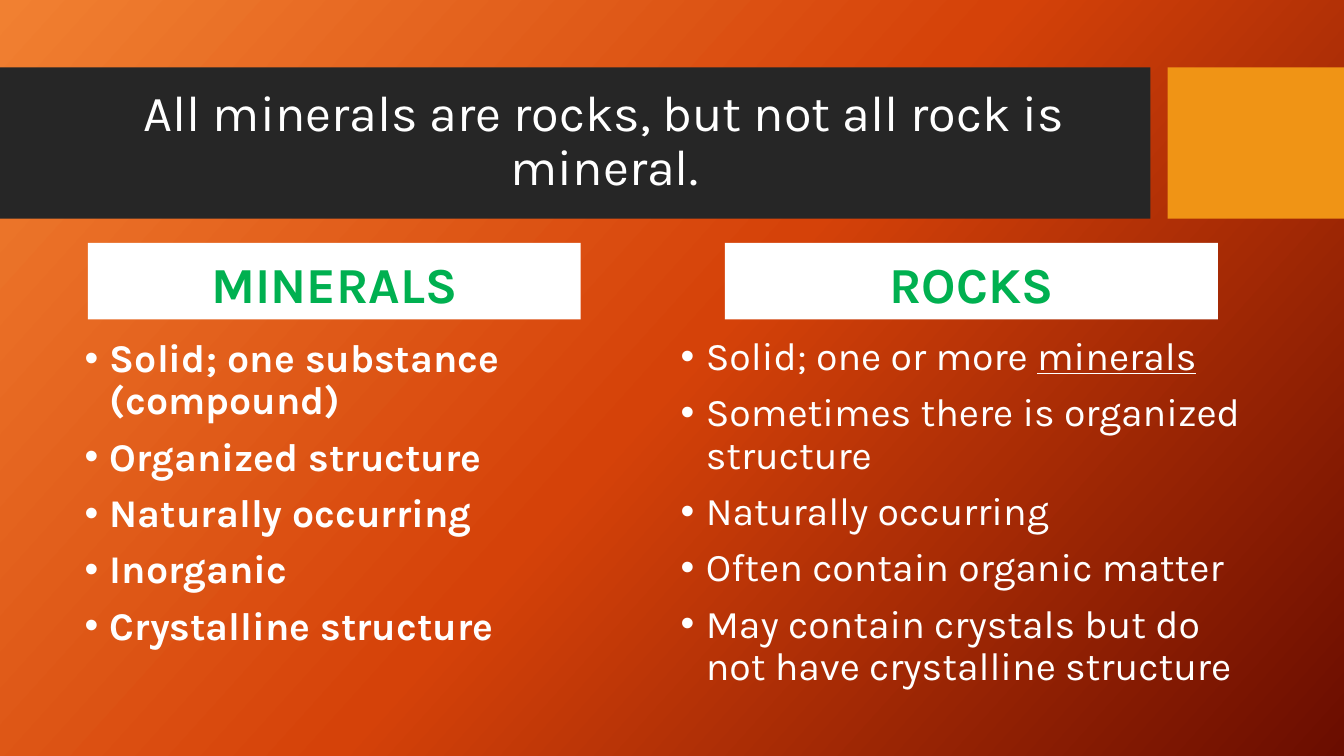
from copy import deepcopy

from lxml import etree
from pptx import Presentation
from pptx.dml.color import RGBColor
from pptx.enum.shapes import MSO_SHAPE
from pptx.enum.text import MSO_ANCHOR, MSO_AUTO_SIZE, PP_ALIGN
from pptx.oxml.ns import qn
from pptx.util import Inches, Pt

RECTANGLE = MSO_SHAPE.RECTANGLE
TOP, MIDDLE, BOTTOM = MSO_ANCHOR.TOP, MSO_ANCHOR.MIDDLE, MSO_ANCHOR.BOTTOM
LEFT, CENTER = PP_ALIGN.LEFT, PP_ALIGN.CENTER
NO_FIT = MSO_AUTO_SIZE.NONE

THEME = {
    "font": "Karla",
    "white": RGBColor.from_string("FFFFFF"),
    "green": RGBColor.from_string("00B050"),
    "band": RGBColor.from_string("262626"),
    "accent": RGBColor.from_string("F09415"),
    "gradient": [(0, "F18031"), (0.5, "D54209"), (1, "6A0D00")],
    "angle": 360 - 42,
    "heading size": Pt(36),
    "list size": Pt(28),
}

deck = Presentation()
deck.slide_width, deck.slide_height = Inches(13.33), Inches(7.5)
page = deck.slides.add_slide(deck.slide_layouts.get_by_name("Comparison"))


def area(left, top, width, height):
    """Turn percentages of the slide into left, top, width and height."""
    across, down = deck.slide_width / 100, deck.slide_height / 100
    return [round(left * across), round(top * down),
            round(width * across), round(height * down)]


def write(box, place, paragraphs, anchor, align, size, color, bold, bullet=False):
    """Place a placeholder and fill it; each paragraph is a list of (text, underline)."""
    box.left, box.top, box.width, box.height = place
    frame = box.text_frame
    frame.word_wrap, frame.auto_size, frame.vertical_anchor = True, NO_FIT, anchor
    for number, pieces in enumerate(paragraphs):
        para = frame.add_paragraph() if number else frame.paragraphs[0]
        layout = {"alignment": align, "line_spacing": 0.9,
                  "space_before": Pt(10 if number else 0)}
        for name, value in layout.items():
            setattr(para, name, value)
        if bullet:
            properties = para._p.get_or_add_pPr()
            properties.set("marL", str(Inches(0.25)))
            properties.set("indent", str(Inches(-0.25)))
            etree.SubElement(properties, qn("a:buChar")).set("char", "•")
        for text, underline in pieces:
            span = para.add_run()
            span.text = text
            look = {"name": THEME["font"], "size": size, "bold": bold,
                    "underline": underline}
            for name, value in look.items():
                setattr(span.font, name, value)
            span.font.color.rgb = color


# Background: three-stop gradient
backdrop = page.background.fill
backdrop.gradient()
backdrop.gradient_angle = THEME["angle"]
stop_list = next(page.element.iter(qn("a:gsLst")))
stop_list.append(deepcopy(stop_list[0]))
for stop, (position, color) in zip(backdrop.gradient_stops, THEME["gradient"]):
    stop.position = position
    stop.color.rgb = RGBColor.from_string(color)

# Title band and accent block, behind the text
bands = [(0, 85.6, "band"), (86.87, 13.13, "accent")]
for layer, (left, width, color) in enumerate(bands, start=2):
    band = page.shapes.add_shape(RECTANGLE, *area(left, 8.93, width, 20))
    band.shadow.inherit = False
    band.fill.solid()
    band.fill.fore_color.rgb = THEME[color]
    band.line.fill.background()
    page.shapes._spTree.insert(layer, band._element)

# Title
write(page.shapes.title, area(5.55, 10.93, 78.84, 15.73),
      [[("All minerals are rocks, but not all rock is mineral.", False)]],
      MIDDLE, CENTER, THEME["heading size"], THEME["white"], False)

# Two columns: a white heading above a bulleted list
columns = [
    {"heading": "MINERALS", "left": 6.53, "bold": True,
     "list area": (5.55, 44.13, 38.56, 50.93),
     "points": [[("Solid; one substance (compound)", False)],
                [("Organized structure", False)],
                [("Naturally occurring", False)],
                [("Inorganic", False)],
                [("Crystalline structure", False)]]},
    {"heading": "ROCKS", "left": 53.94, "bold": False,
     "list area": (49.89, 43.87, 44.71, 51.33),
     "points": [[("Solid; one or more ", False), ("minerals", True)],
                [("Sometimes there is organized structure", False)],
                [("Naturally occurring", False)],
                [("Often contain organic matter", False)],
                [("May contain crystals but do not have crystalline structure", False)]]},
]
boxes = {box.placeholder_format.idx: box for box in page.placeholders}
for number, column in enumerate(columns):
    heading, points = boxes[2 * number + 1], boxes[2 * number + 2]
    write(heading, area(column["left"], 32.13, 36.68, 10.13),
          [[(column["heading"], False)]],
          BOTTOM, CENTER, THEME["heading size"], THEME["green"], True)
    heading.fill.solid()
    heading.fill.fore_color.rgb = THEME["white"]
    write(points, area(*column["list area"]), column["points"],
          TOP, LEFT, THEME["list size"], THEME["white"], column["bold"], bullet=True)

deck.save("out.pptx")
